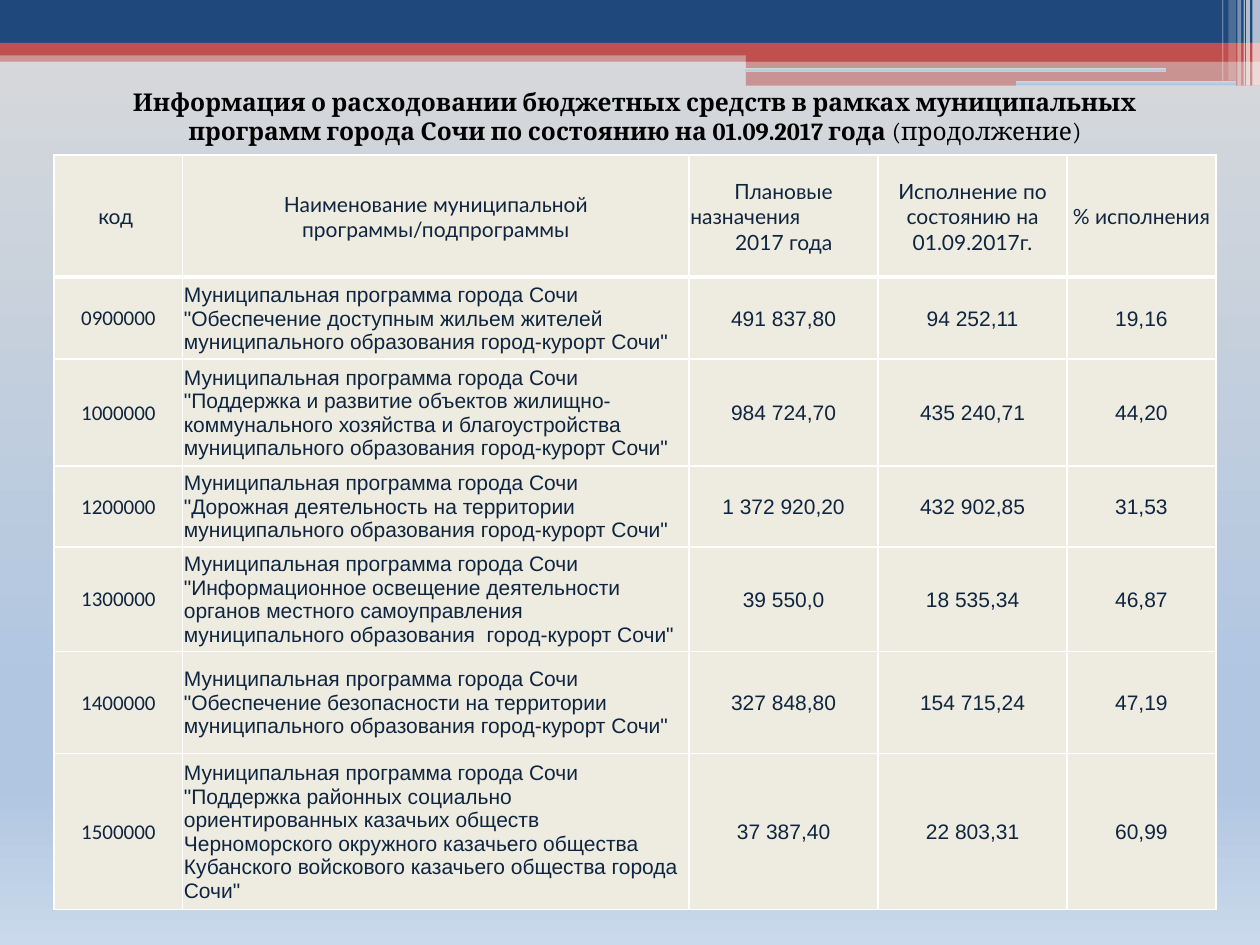
from lxml.etree import SubElement as Sub, Element as Elem
from pptx import Presentation
from pptx.dml.color import RGBColor as Rgb
from pptx.enum.shapes import MSO_SHAPE as Kind
from pptx.enum.text import MSO_ANCHOR as Anchor, MSO_AUTO_SIZE as Fit, PP_ALIGN as Align
from pptx.oxml.ns import qn
from pptx.util import Inches, Pt

HUES = {"red": "C0504D", "blue": "1F497D", "white": "FFFFFF", "cream": "EEECE1",
        "navy": "0F243E", "black": "000000"}
FADE = [(0, "D9D9D9"), (74, "B0C6E1"), (83, "B0C6E1"), (100, "CAD9EB")]
BARS = [
    (0, 0.4, 10, 0.09, "red", 50), (0, 0, 10, 0.34, "blue", 100),
    (0, 0.34, 10, 0.1, "red", 100), (5.92, 0.39, 4.08, 0.1, "red", 100),
    (5.92, 0.48, 4.08, 0.2, "red", 50),
]
SLOTS = [(5.91, 0.54, 3.35, 0.03), (8.06, 0.64, 1.75, 0.04)]
RAYS = [(9.94, 0.06, 0.68, 65), (9.89, 0.03, 0.68, 65), (9.87, 0.01, 0.68, 60),
        (9.82, 0.03, 0.68, 40), (9.75, 0.06, 0.64, 20), (9.7, 0.01, 0.64, 30)]
TITLE = [("Информация о расходовании бюджетных средств в рамках муниципальных "
          "программ города Сочи по состоянию на 01.09.2017 года ", True),
         ("(продолжение)", False)]
COLS = [1.02, 4.02, 1.5, 1.5, 1.18]
ROWS = [0.97, 0.65, 0.85, 0.64, 0.83, 0.81, 1.24]
HEAD = ["код\u00a0", "Наименование муниципальной программы/подпрограммы",
        "Плановые\nназначения\n2017 года",
        "Исполнение по состоянию на 01.09.2017г.", "% исполнения"]
LEAD = "Муниципальная программа города Сочи "
TOWN = "муниципального образования город-курорт Сочи"
DATA = [
    ("0900000", f"Обеспечение доступным жильем жителей {TOWN}",
     "491 837,80", "94 252,11", "19,16"),
    ("1000000", "Поддержка и развитие объектов жилищно-коммунального хозяйства "
     f"и благоустройства {TOWN}", "984 724,70", "435 240,71", "44,20"),
    ("1200000", f"Дорожная деятельность на территории {TOWN}",
     "1 372 920,20", "432 902,85", "31,53"),
    ("1300000", "Информационное освещение деятельности органов местного "
     "самоуправления муниципального образования  город-курорт Сочи",
     "39 550,0", "18 535,34", "46,87"),
    ("1400000", f"Обеспечение безопасности на территории {TOWN}",
     "327 848,80", "154 715,24", "47,19"),
    ("1500000", "Поддержка районных социально ориентированных казачьих обществ "
     "Черноморского окружного казачьего общества Кубанского войскового "
     "казачьего общества города Сочи", "37 387,40", "22 803,31", "60,99"),
]


class Deck:
    """Holds the style and the current slide."""

    def __init__(self):
        self.prs = Presentation()
        self.prs.slide_width, self.prs.slide_height = Inches(10), Inches(7.5)
        self.slide = self.prs.slides.add_slide(self.prs.slide_layouts[5])

    def fade(self, fill, root):
        fill.gradient()
        fill.gradient_angle = 270
        stops = root.find(".//" + qn("a:gsLst"))
        stops.clear()
        for pos, hue in FADE:
            stop = Sub(stops, qn("a:gs"), pos=str(pos * 1000))
            Sub(stop, qn("a:srgbClr"), val=hue)

    def back(self):
        self.fade(self.slide.background.fill, self.slide.element)

    def shape(self, kind, *box):
        shape = self.slide.shapes.add_shape(kind, *map(Inches, box))
        shape.shadow.inherit = False
        shape.line.fill.background()
        return shape

    def bar(self, x, y, w, h, hue, alpha):
        shape = self.shape(Kind.RECTANGLE, x, y, w, h)
        shape.fill.solid()
        shape.fill.fore_color.rgb = Rgb.from_string(HUES[hue])
        if alpha < 100:
            tint = shape.element.spPr.find(".//" + qn("a:srgbClr"))
            Sub(tint, qn("a:alpha"), val=str(alpha * 1000))

    def slot(self, *box):
        shape = self.shape(Kind.ROUNDED_RECTANGLE, *box)
        self.fade(shape.fill, shape.element)

    def run(self, para, text, face, size, hue, bold=False):
        run = para.add_run()
        run.text = text
        font = run.font
        font.name, font.size, font.bold = face, Pt(size), bold
        font.color.rgb = Rgb.from_string(HUES[hue])

    def title(self, runs, *box):
        shape = self.slide.shapes.title
        shape.left, shape.top, shape.width, shape.height = map(Inches, box)
        frame = shape.text_frame
        frame.word_wrap, frame.auto_size = True, Fit.SHAPE_TO_FIT_TEXT
        frame.vertical_anchor = Anchor.TOP
        para = frame.paragraphs[0]
        para.alignment = Align.CENTER
        for text, bold in runs:
            self.run(para, text, "Cambria", 14, "black", bold)
        shape.element.getparent().append(shape.element)

    def edge(self, cell, wide):
        props = cell._tc.get_or_add_tcPr()
        for spot, side in enumerate("LRTB"):
            line = Elem(qn("a:ln" + side), w=str(Pt(wide.get(side, 1))))
            Sub(Sub(line, qn("a:solidFill")), qn("a:srgbClr"), val=HUES["white"])
            props.insert(spot, line)

    def cell(self, cell, text, face, aligns, wide):
        cell.fill.solid()
        cell.fill.fore_color.rgb = Rgb.from_string(HUES["cream"])
        cell.vertical_anchor = Anchor.MIDDLE
        cell.margin_left = cell.margin_right = cell.margin_top = Inches(0.01)
        cell.margin_bottom = 0
        frame = cell.text_frame
        for spot, part in enumerate(text.split("\n")):
            para = frame.add_paragraph() if spot else frame.paragraphs[0]
            para.alignment = aligns[spot % len(aligns)]
            self.run(para, part, face, 12, "navy")
        self.edge(cell, wide)

    def table(self, x, y):
        frame = self.slide.shapes.add_table(
            len(ROWS), len(COLS), *map(Inches, (x, y, sum(COLS), sum(ROWS))))
        table = frame.table
        table.first_row = table.horz_banding = False
        for col, wide in zip(table.columns, COLS):
            col.width = Inches(wide)
        for row, high in zip(table.rows, ROWS):
            row.height = Inches(high)
        mid = Align.CENTER
        for c, text in enumerate(HEAD):
            self.cell(table.cell(0, c), text, "Lato", [mid, Align.LEFT, mid], {"B": 3})
        for r, (code, name, *sums) in enumerate(DATA, 1):
            for c, text in enumerate([code, f'{LEAD}"{name}"', *sums]):
                self.cell(table.cell(r, c), text, "Arial" if c else "Calibri",
                          [Align.LEFT if c == 1 else mid], {"T": 3} if r == 1 else {})


def main():
    deck = Deck()
    deck.back()
    for bar in BARS:
        deck.bar(*bar)
    for slot in SLOTS:
        deck.slot(*slot)
    for x, w, h, alpha in RAYS:
        deck.bar(x, 0, w, h, "white", alpha)
    deck.table(0.43, 1.23)
    deck.title(TITLE, 0.59, 0.64, 8.9, 0.57)
    deck.prs.save("out.pptx")


if __name__ == "__main__":
    main()
